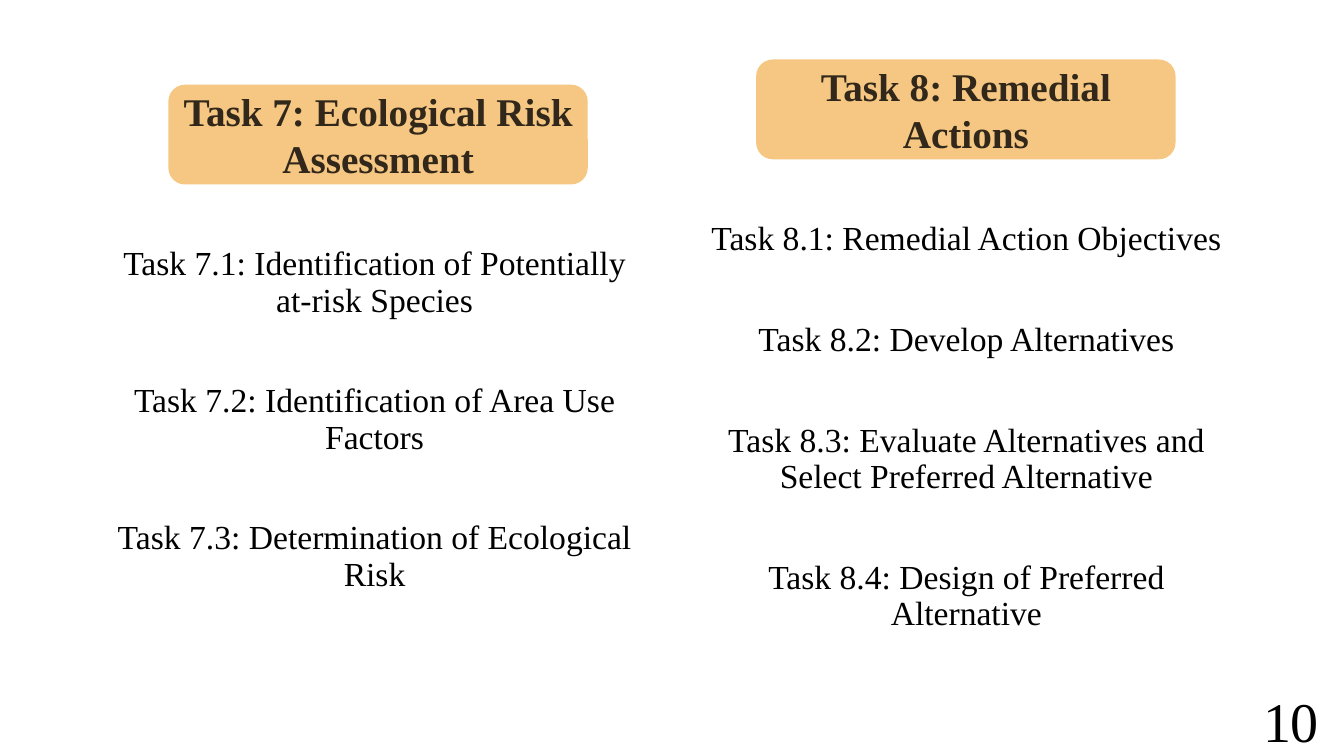
import pptx
import pptx.util
import pptx.dml.color
import pptx.enum.shapes
import pptx.enum.text
import lxml.etree

# Content
TASKS = [
    {"title": "Task 7: Ecological Risk Assessment",
     "center": 3.75, "top": 0.84, "body_left": 0.92, "body_size": (5.59, 3.67),
     "steps": ["Task 7.1: Identification of Potentially at-risk Species",
               "Task 7.2: Identification of Area Use Factors",
               "Task 7.3: Determination of Ecological Risk"]},
    {"title": "Task 8: Remedial Actions",
     "center": 9.58, "top": 0.59, "body_left": 6.75, "body_size": (5.67, 4.31),
     "steps": ["Task 8.1: Remedial Action Objectives",
               "Task 8.2: Develop Alternatives",
               "Task 8.3: Evaluate Alternatives and Select Preferred Alternative",
               "Task 8.4: Design of Preferred Alternative"]},
]
PAGE_NUMBER = "10"

# Format
FONT = "Times New Roman"
INK, HEADER_FILL = "000000", "F6C782"
HEADER_WIDTH, HEADER_HEIGHT = 4.16, 0.99
BODY_DROP = 1.56  # from header top to body top
STEP_GAP = 46     # points between steps
ALIGN = pptx.enum.text.PP_ALIGN
ANCHOR = pptx.enum.text.MSO_ANCHOR


def color(hex_value):
    return pptx.dml.color.RGBColor.from_string(hex_value)


def inches(*lengths):
    return [pptx.util.Inches(length) for length in lengths]


def write(box, lines, size, bold=False, align=ALIGN.CENTER, anchor=ANCHOR.TOP,
          spacing=None, gap=0, opacity=100):
    frame = box.text_frame
    frame.word_wrap = True
    frame.vertical_anchor = anchor
    for index, line in enumerate(lines):
        para = frame.add_paragraph() if index else frame.paragraphs[0]
        para.alignment = align
        if spacing:
            para.line_spacing = spacing
        if index:
            para.space_before = pptx.util.Pt(gap)
        span = para.add_run()
        span.text = line
        span.font.name = FONT
        span.font.size = pptx.util.Pt(size)
        span.font.bold = bold
        span.font.color.rgb = color(INK)
        if opacity < 100:
            for tint in span.font.fill._xPr.iter(pptx.oxml.ns.qn("a:srgbClr")):
                alpha = lxml.etree.SubElement(tint, pptx.oxml.ns.qn("a:alpha"))
                alpha.set("val", str(opacity * 1000))


def main():
    deck = pptx.Presentation()
    deck.slide_width, deck.slide_height = inches(13.33, 7.5)
    page = deck.slides.add_slide(deck.slide_layouts[6])

    # Task columns: header above its steps
    for task in TASKS:
        body = page.shapes.add_textbox(
            *inches(task["body_left"], task["top"] + BODY_DROP, *task["body_size"]))
        write(body, task["steps"], 24, spacing=0.9, gap=STEP_GAP)

        header = page.shapes.add_shape(
            pptx.enum.shapes.MSO_SHAPE.ROUNDED_RECTANGLE,
            *inches(task["center"] - HEADER_WIDTH / 2, task["top"],
                    HEADER_WIDTH, HEADER_HEIGHT))
        header.shadow.inherit = False
        header.fill.solid()
        header.fill.fore_color.rgb = color(HEADER_FILL)
        header.line.fill.background()
        write(header, [task["title"]], 28, bold=True, anchor=ANCHOR.MIDDLE, opacity=80)

    # Page number
    number = page.shapes.add_textbox(*inches(11.94, 6.94, 1.24, 0.4))
    write(number, [PAGE_NUMBER], 40, align=ALIGN.RIGHT, anchor=ANCHOR.MIDDLE)

    deck.save("out.pptx")


if __name__ == "__main__":
    main()
